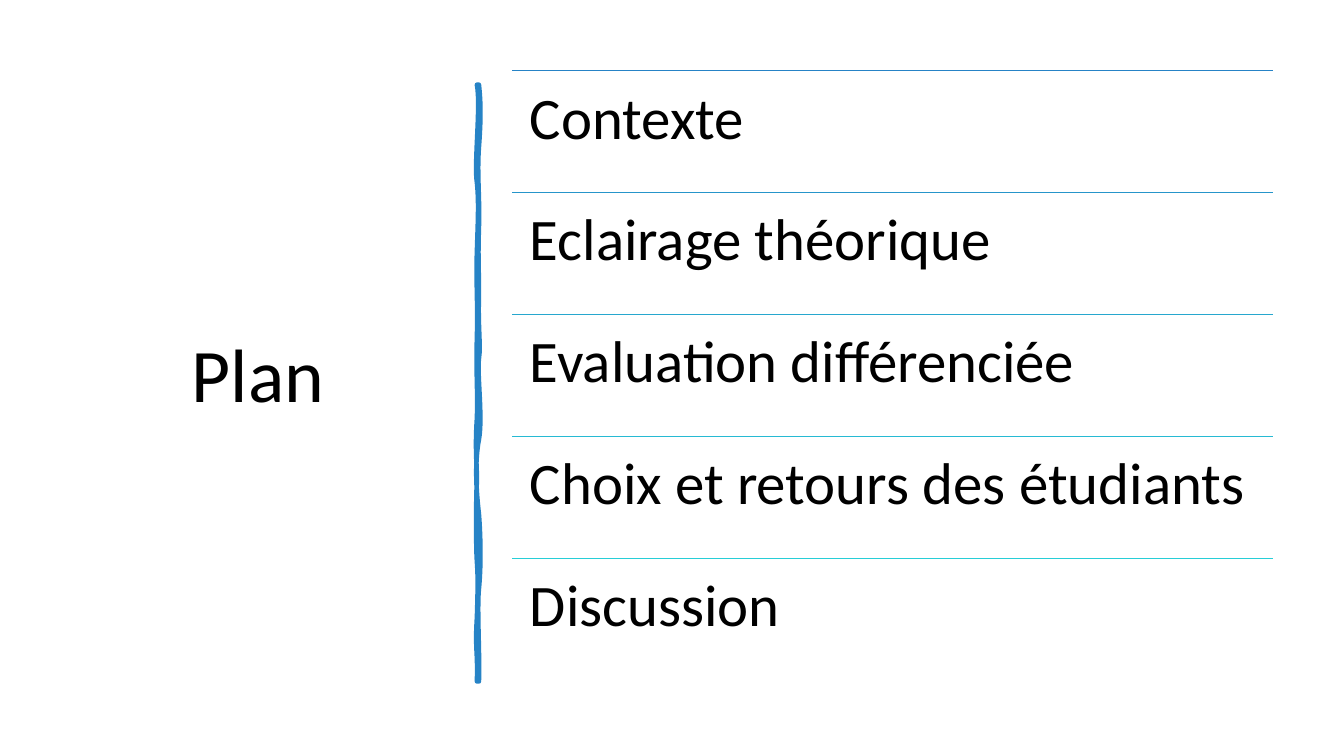
from lxml.etree import SubElement
from pptx import Presentation
from pptx.dml.color import RGBColor
from pptx.enum.shapes import MSO_CONNECTOR as Connector
from pptx.enum.text import MSO_ANCHOR as Anchor, PP_ALIGN as Align
from pptx.oxml.ns import qn
from pptx.util import Inches, Pt

# Content
TITLE = "Plan"
COLORS = {"text": "000000", "brush": "2683C6"}
TOPICS = [
    ("Contexte", "2683C6"),
    ("Eclairage théorique", "2695CA"),
    ("Evaluation différenciée", "27A7CE"),
    ("Choix et retours des étudiants", "27BAD3"),
    ("Discussion", "27CED7"),
]
LIST_LEFT, LIST_TOP, LIST_WIDTH, ROW_HEIGHT = 5.08, 0.7, 7.55, 1.21

# Brush stroke outline: a start point, then two controls and an end per curve
BRUSH = [
    (4.75, 0.84),
    (4.77, 1.02), (4.77, 1.19), (4.75, 1.46),
    (4.73, 1.73), (4.76, 1.95), (4.75, 2.26),
    (4.74, 2.57), (4.75, 2.62), (4.75, 2.94),
    (4.74, 3.25), (4.77, 3.42), (4.75, 3.56),
    (4.73, 3.7), (4.79, 4.14), (4.75, 4.36),
    (4.71, 4.57), (4.72, 4.84), (4.75, 5.1),
    (4.77, 5.36), (4.77, 5.64), (4.75, 5.84),
    (4.73, 6.03), (4.76, 6.5), (4.75, 6.76),
    (4.74, 6.76), (4.73, 6.76), (4.73, 6.76),
    (4.74, 6.46), (4.71, 6.44), (4.73, 6.13),
    (4.74, 5.83), (4.74, 5.7), (4.73, 5.57),
    (4.72, 5.44), (4.72, 4.95), (4.73, 4.77),
    (4.73, 4.59), (4.71, 4.45), (4.73, 4.15),
    (4.74, 3.86), (4.72, 3.73), (4.73, 3.35),
    (4.74, 2.98), (4.72, 2.81), (4.73, 2.5),
    (4.74, 2.18), (4.75, 2), (4.73, 1.81),
    (4.7, 1.63), (4.77, 1.04), (4.73, 0.84),
    (4.74, 0.84), (4.74, 0.84), (4.75, 0.84),
]


def color(value):
    return RGBColor.from_string(value)


def add_text(shapes, text, left, top, width, height, size, align=Align.LEFT,
             anchor=Anchor.TOP, inset=Inches(0.1)):
    box = shapes.add_textbox(*map(Inches, (left, top, width, height)))
    frame = box.text_frame
    frame.word_wrap = True
    frame.vertical_anchor = anchor
    frame.margin_left = frame.margin_right = inset
    frame.margin_top = frame.margin_bottom = inset
    paragraph = frame.paragraphs[0]
    paragraph.alignment = align
    paragraph.line_spacing = 0.9
    run = paragraph.add_run()
    run.text = text
    run.font.name = "Calibri"
    run.font.size = Pt(size)
    run.font.color.rgb = color(COLORS["text"])


def add_rule(shapes, left, top, width, line_color):
    rule = shapes.add_connector(
        Connector.STRAIGHT, *map(Inches, (left, top, left + width, top)))
    rule.line.color.rgb = color(line_color)
    rule.line.width = Pt(1)
    SubElement(rule._element.spPr, qn("a:effectLst"))


def bend_segments(shape):
    """Turn each three straight segments into one cubic curve."""
    segments = list(shape._element.iter(qn("a:lnTo")))
    for first in range(0, len(segments), 3):
        curve, *others = segments[first:first + 3]
        bezier = curve.makeelement(qn("a:cubicBezTo"))
        curve.addprevious(bezier)
        for segment in (curve, *others):
            bezier.append(segment[0])
            segment.getparent().remove(segment)


def add_brush(shapes):
    start, *controls = [tuple(map(Inches, point)) for point in BRUSH]
    builder = shapes.build_freeform(*start, scale=1.0)
    builder.add_line_segments(controls, close=True)
    brush = builder.convert_to_shape()
    bend_segments(brush)
    brush.shadow.inherit = False
    brush.fill.solid()
    brush.fill.fore_color.rgb = color(COLORS["brush"])
    brush.line.color.rgb = color(COLORS["brush"])
    brush.line.width = Pt(3.25)
    SubElement(brush.line._get_or_add_ln(), qn("a:round"))


def main():
    presentation = Presentation()
    presentation.slide_width = Inches(13.33)
    presentation.slide_height = Inches(7.5)
    slide = presentation.slides.add_slide(presentation.slide_layouts[6])

    # Title and vertical brush stroke
    add_text(slide.shapes, TITLE, 0.69, 0.69, 3.74, 6.11, 54,
             align=Align.CENTER, anchor=Anchor.MIDDLE)
    add_brush(slide.shapes)

    # Topics, each under its own rule
    topic_list = slide.shapes.add_group_shape().shapes
    for row, (topic, line_color) in enumerate(TOPICS):
        top = LIST_TOP + row * ROW_HEIGHT
        add_rule(topic_list, LIST_LEFT, top, LIST_WIDTH, line_color)
        add_text(topic_list, topic, LIST_LEFT, top, LIST_WIDTH, ROW_HEIGHT, 42,
                 inset=Pt(12.6))

    presentation.save("out.pptx")


if __name__ == "__main__":
    main()
